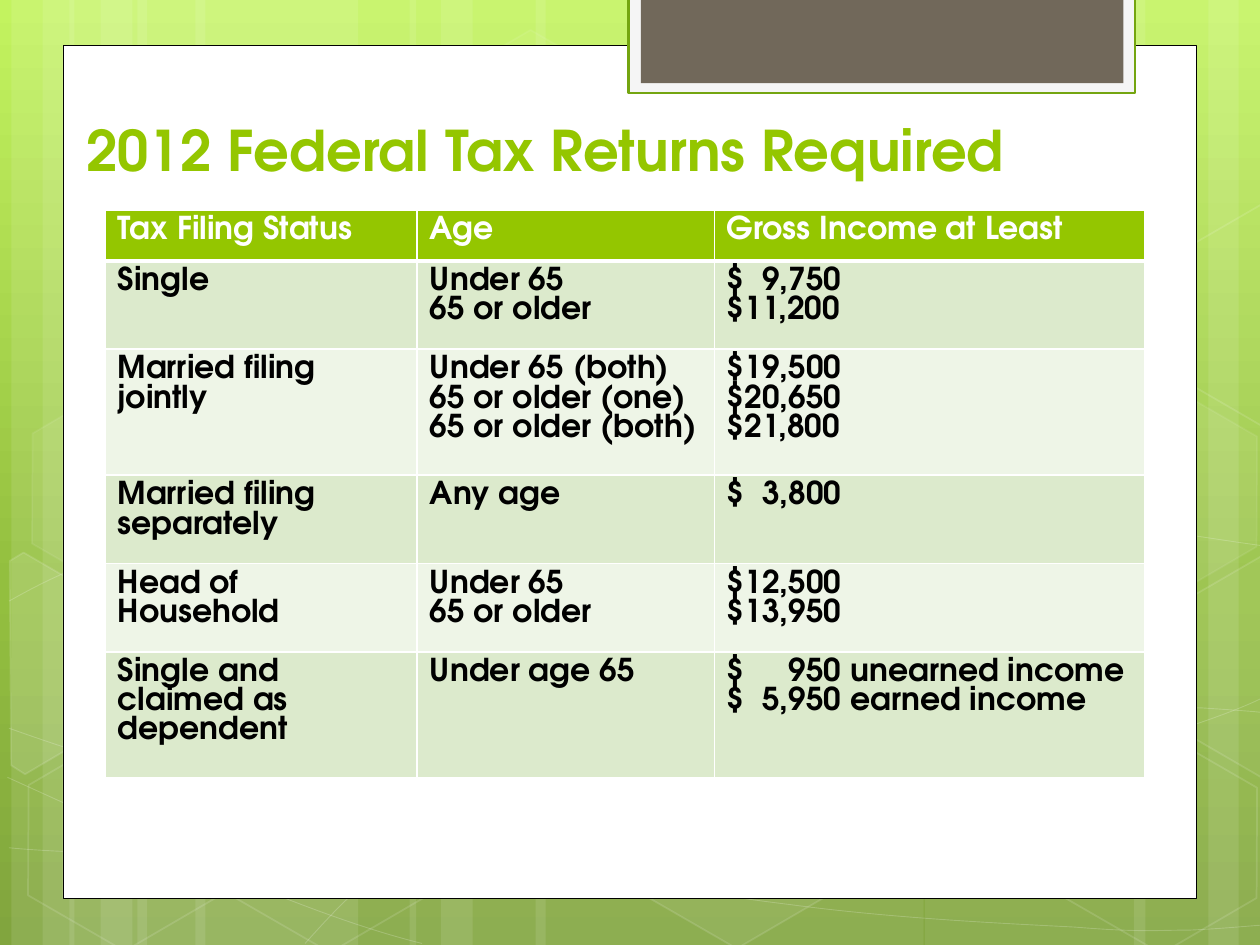
from copy import deepcopy
from itertools import chain
from math import cos, radians, sin

from lxml.etree import SubElement
from pptx import Presentation
from pptx.dml.color import RGBColor
from pptx.enum.shapes import MSO_SHAPE as Shape
from pptx.enum.text import MSO_ANCHOR as Anchor, MSO_AUTO_SIZE as AutoSize, PP_ALIGN as Align
from pptx.oxml.ns import qn
from pptx.util import Cm, Pt

FONT = "TeX Gyre Adventor"
WHITE = RGBColor(0xFF, 0xFF, 0xFF)
BLACK = RGBColor(0x00, 0x00, 0x00)
LIME = RGBColor(0x94, 0xC6, 0x00)
TAB_EDGE = RGBColor(0x74, 0xA5, 0x10)
TAB_PAPER = RGBColor(0xF5, 0xF5, 0xF5)
TAB_BROWN = RGBColor(0x71, 0x68, 0x5A)
BANDS = (RGBColor(0xDC, 0xEA, 0xCC), RGBColor(0xEE, 0xF5, 0xE7))
GRADIENT = ((0, RGBColor(0xC3, 0xF3, 0x5F)), (0.62, RGBColor(0x93, 0xBF, 0x3F)),
            (1, RGBColor(0x81, 0xA5, 0x3E)))

# All lengths below are centimetres; opacities are percentages.
STRIPES = ((2.77, 4.45), (0.23, 1.27), (0.86, 2.11), (3.94, 4.45), (1.4, 1.27), (2.03, 2.11),
           (18.64, 4.45), (24.36, 1.27), (22.86, 2.11), (10.8, 7.82), (8.26, 1.27), (8.89, 2.11))

# Each curve is a start point followed by Bézier triples.
CURVES = (
    ((0.18, 17.09), (0.94, 17.17), (2.92, 17.25), (4.83, 17.22),
     (6.73, 17.2), (9.09, 17.15), (11.63, 16.89), (14.17, 16.64), (17.78, 16.15), (20.12, 15.67),
     (22.43, 15.19), (24.82, 14.43), (25.58, 14)),
    ((0.18, 12.12), (0.91, 11.71), (1.65, 11.33), (3.07, 10.95),
     (4.52, 10.57), (6.58, 10.01), (8.81, 9.83), (11.07, 9.65), (13.82, 9.63), (16.61, 9.83),
     (19.41, 10.03), (24.05, 10.82), (25.58, 11.02)),
    ((0.15, 15.67), (3.23, 17.07), (6.27, 18.47), (8.51, 19.02)),
    ((0.18, 14.68), (0.97, 14.96), (1.78, 15.24), (3.25, 15.65),
     (4.72, 16.03), (6.93, 16.66), (9.07, 17.09), (11.18, 17.53), (13.84, 17.98), (15.95, 18.24),
     (18.06, 18.52), (20.32, 18.62), (21.67, 18.69), (23.01, 18.8), (23.34, 18.75), (24, 18.75),
     (24.66, 18.72), (25.12, 18.67), (25.58, 18.64)),
    ((6.15, 19.02), (6.6, 18.52), (7.06, 18.01), (7.67, 17.55),
     (8.28, 17.07), (9.14, 16.59), (9.86, 16.23), (10.57, 15.88), (11, 15.72), (11.91, 15.47),
     (12.85, 15.21), (14.55, 14.86), (15.44, 14.68), (16.36, 14.5), (16.48, 14.5), (17.27, 14.45),
     (18.06, 14.38), (19.3, 14.3), (20.17, 14.27), (21.06, 14.25), (22.5, 14.27), (22.5, 14.27),
     (23.07, 14.27), (23.64, 14.27), (24.21, 14.27), (24.66, 14.3), (25.1, 14.33), (25.32, 14.35),
     (25.55, 14.38), (25.63, 14.35), (25.55, 14.38)),
)

# left, top, fill opacity, line opacity
HEXAGONS = ((8.48, 0.91, 4, 8), (12.62, 14.96, 6, 12), (0.28, 15.01, 0, 12), (0.36, 7.92, 7, 8),
            (4.42, 15.04, 0, 12), (19.13, 11.51, 10, 12), (21.18, 15.06, 0, 12),
            (21.18, 7.98, 7, 8))
TILT = 30
# Hexagons cut off by the slide edge: their corners and the centre they are tilted about.
LEFT_CUT = ((0.2, 11.3), (0.48, 11.13), (2.44, 12.27), (2.41, 14.48), (0.51, 15.6), (0.23, 15.42))
LEFT_CENTRE = (0.91, 13.61)
RIGHT_CUT = ((23.52, 12.32), (25.45, 11.2), (25.63, 11.33), (25.63, 15.57), (25.45, 15.67),
             (23.52, 14.55))
RIGHT_CENTRE = (25.02, 13.21)
RIGHT_CUT_STEP = 7.09

COLUMN_WIDTHS = (6.29, 5.99, 8.68)
ROW_HEIGHTS = (1.02, 1.78, 2.54, 1.78, 1.78, 2.54)
ROWS = (
    ("Tax Filing Status", "Age", "Gross Income at Least"),
    ("Single", "Under 65\n65 or older", "$  9,750\n$11,200"),
    ("Married filing jointly", "Under 65 (both)\n65 or older (one)\n65 or older (both)",
     "$19,500\n$20,650\n$21,800"),
    ("Married filing separately", "Any age", "$  3,800"),
    ("Head of Household", "Under 65\n65 or older", "$12,500\n$13,950"),
    ("Single and claimed as dependent", "Under age 65",
     "$     950 unearned income\n$  5,950 earned income"),
)


def write_text(frame, text, size=18, color=BLACK, bold=True, align=Align.LEFT):
    frame.text = text
    frame.word_wrap = True
    for paragraph in frame.paragraphs:
        paragraph.alignment = align
        for run in paragraph.runs:
            run.font.name = FONT
            run.font.size = Pt(size)
            run.font.bold = bold
            run.font.color.rgb = color


def set_opacity(parent, percent):
    if percent < 100:
        color = parent.find(".//" + qn("a:srgbClr"))
        SubElement(color, qn("a:alpha")).set("val", str(percent * 1000))


def paint(shape, fill=None, line=None, line_width=1, fill_opacity=100, line_opacity=100):
    shape.shadow.inherit = False
    properties = shape.element.spPr
    if fill is None or fill_opacity == 0:
        shape.fill.background()
    else:
        shape.fill.solid()
        shape.fill.fore_color.rgb = fill
        set_opacity(properties.find(qn("a:solidFill")), fill_opacity)
    if line is None:
        shape.line.fill.background()
    else:
        shape.line.color.rgb = line
        shape.line.width = Pt(line_width)
        set_opacity(properties.find(qn("a:ln")), line_opacity)


def add_box(slide, left, top, width, height, kind=Shape.RECTANGLE, **style):
    shape = slide.shapes.add_shape(kind, Cm(left), Cm(top), Cm(width), Cm(height))
    paint(shape, **style)
    return shape


def add_outline(slide, points, closed, **style):
    (x, y), *others = [(Cm(x), Cm(y)) for x, y in points]
    builder = slide.shapes.build_freeform(x, y)
    builder.add_line_segments(others, close=closed)
    shape = builder.convert_to_shape()
    paint(shape, line=WHITE, **style)
    return shape


def bend(shape):
    """Turn every three line segments into one Bézier segment."""
    outline = shape.element.find(".//" + qn("a:path"))
    segments = outline.findall(qn("a:lnTo"))
    for start in range(0, len(segments), 3):
        curve = SubElement(outline, qn("a:cubicBezTo"))
        for segment in segments[start:start + 3]:
            curve.append(segment[0])
            outline.remove(segment)


def turn_back(points, centre):
    """Undo the tilt of points about a centre."""
    cosine, sine = cos(radians(TILT)), sin(radians(TILT))
    offsets = [(x - centre[0], y - centre[1]) for x, y in points]
    return [(centre[0] + x * cosine + y * sine, centre[1] - x * sine + y * cosine)
            for x, y in offsets]


def set_gradient(slide):
    fill = slide.background.fill
    fill.gradient()
    fill.gradient_angle = 270
    stop_list = slide.element.find(".//" + qn("a:gsLst"))
    stop_list.append(deepcopy(stop_list[-1]))
    for stop, (position, color) in zip(fill.gradient_stops, GRADIENT):
        stop.position = position
        stop.color.rgb = color


def add_backdrop(slide, left, top, height):
    def moved(points, down=0):
        return [(left + x, top + y + down) for x, y in points]

    for x, width in STRIPES:
        add_box(slide, left + x, top, width, height, fill=WHITE, fill_opacity=10)
    for curve in CURVES:
        bend(add_outline(slide, moved(curve), False, line_width=0.5, line_opacity=20))
    for x, y, fill_opacity, line_opacity in HEXAGONS:
        hexagon = add_box(slide, left + x, top + y, 4.45, 3.86, Shape.HEXAGON, fill=WHITE,
                          line=WHITE, fill_opacity=fill_opacity, line_opacity=line_opacity)
        hexagon.adjustments[0] = 0.285
        hexagon.adjustments[1] = 1.155
        hexagon.rotation = TILT
    for points, centre, down, opacity in ((LEFT_CUT, LEFT_CENTRE, 0, 10),
                                          (RIGHT_CUT, RIGHT_CENTRE, 0, 4),
                                          (RIGHT_CUT, RIGHT_CENTRE, -RIGHT_CUT_STEP, 0)):
        cut = add_outline(slide, moved(turn_back(points, centre), down), True, fill=WHITE,
                          fill_opacity=opacity, line_opacity=12)
        cut.rotation = TILT


def add_page(slide, left, top, width, height):
    """Add the white page and the tab that hangs over its top edge."""
    add_box(slide, left, top, width, height, fill=WHITE, line=BLACK, line_width=0.5)
    add_box(slide, left + 11.4, top - 0.96, 10.22, 1.93, fill=TAB_PAPER, line=TAB_EDGE,
            line_width=1.25)
    add_box(slide, left + 11.65, top - 0.96, 9.73, 1.73, fill=TAB_BROWN)


def place_title(slide, text, left, top, width, height):
    title = slide.shapes.title
    title.left, title.top, title.width, title.height = map(Cm, (left, top, width, height))
    write_text(title.text_frame, text, size=32, color=LIME)
    title.text_frame.auto_size = AutoSize.NONE
    title.text_frame.vertical_anchor = Anchor.BOTTOM
    slide.shapes.element.append(title.element)


def set_borders(cell, **widths):
    properties = cell._tc.get_or_add_tcPr()
    for index, (side, width) in enumerate(widths.items()):
        line = SubElement(properties, qn("a:ln" + side), w=str(Pt(width)))
        color = SubElement(SubElement(line, qn("a:solidFill")), qn("a:srgbClr"))
        color.set("val", str(WHITE))
        properties.insert(index, line)


def add_tax_table(slide, left, top):
    frame = slide.shapes.add_table(len(ROWS), len(COLUMN_WIDTHS), Cm(left), Cm(top),
                                   Cm(sum(COLUMN_WIDTHS)), Cm(sum(ROW_HEIGHTS)))
    table = frame.table
    for column, width in zip(table.columns, COLUMN_WIDTHS):
        column.width = Cm(width)
    for row, height in zip(table.rows, ROW_HEIGHTS):
        row.height = Cm(height)
    for index, text in enumerate(chain.from_iterable(ROWS)):
        row, column = divmod(index, len(COLUMN_WIDTHS))
        cell = table.cell(row, column)
        write_text(cell.text_frame, text, color=BLACK if row else WHITE)
        cell.fill.solid()
        cell.fill.fore_color.rgb = BANDS[(row - 1) % 2] if row else LIME
        set_borders(cell, L=1, R=1, T=3 if row == 1 else 1, B=1 if row else 3)


def main():
    presentation = Presentation()
    presentation.slide_width, presentation.slide_height = Cm(25.4), Cm(19.05)
    slide = presentation.slides.add_slide(presentation.slide_layouts[5])
    set_gradient(slide)
    add_backdrop(slide, 0, 0, 19.05)
    add_page(slide, 1.27, 0.91, 22.86, 17.2)
    place_title(slide, "2012 Federal Tax Returns Required", 1.48, 1.7, 22.23, 2.11)
    add_tax_table(slide, 2.12, 4.24)
    presentation.save("out.pptx")


if __name__ == "__main__":
    main()
